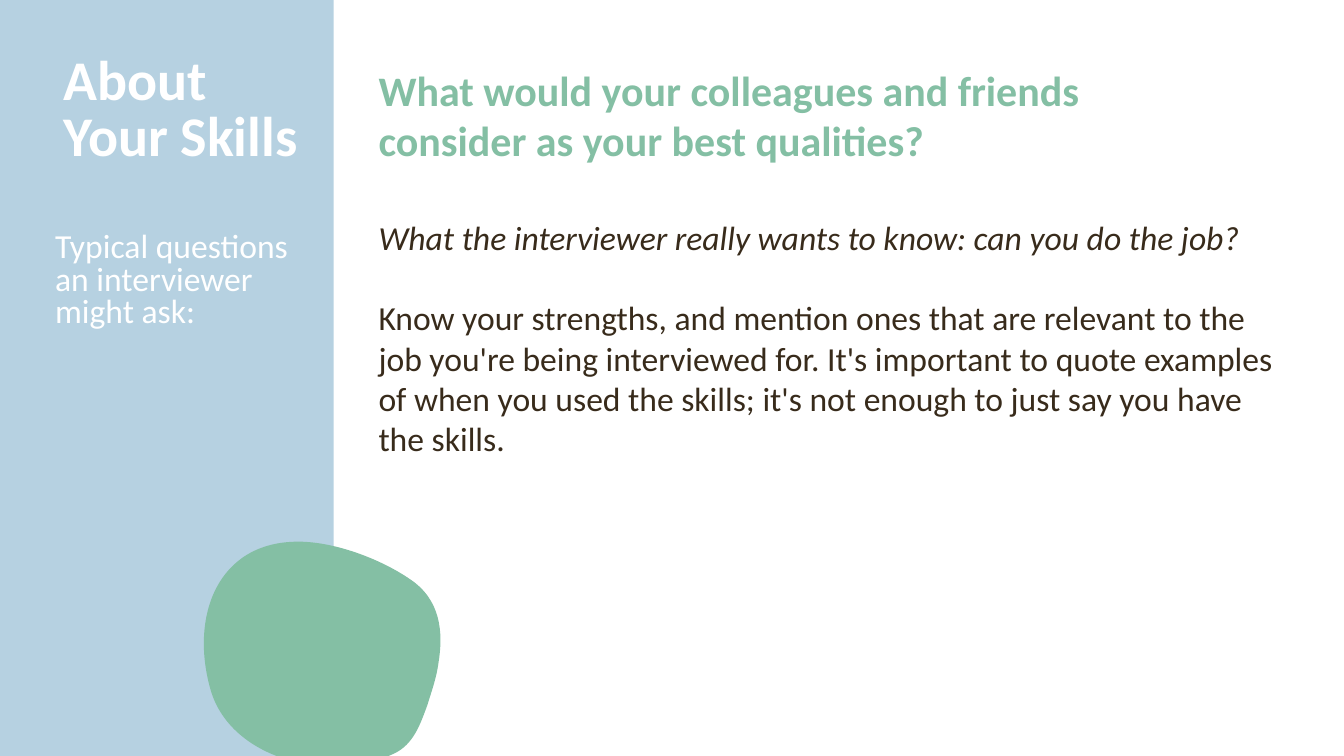
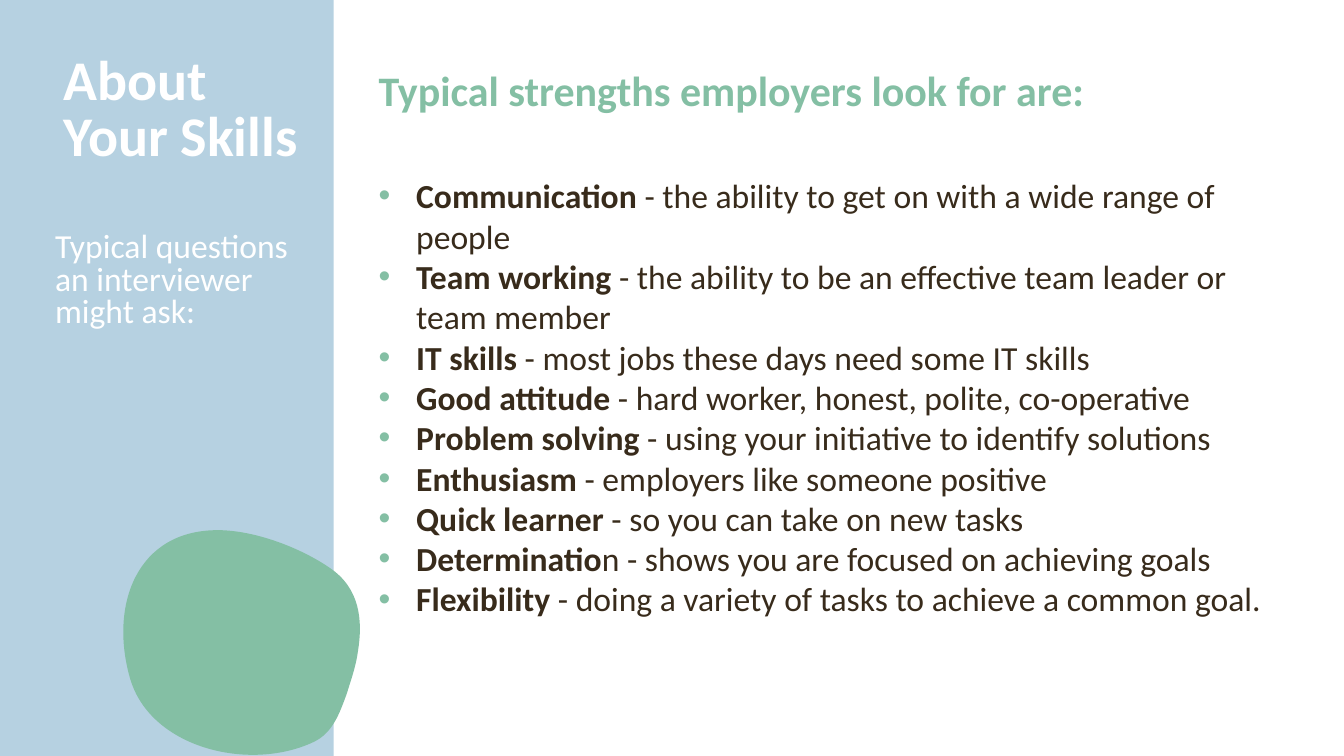
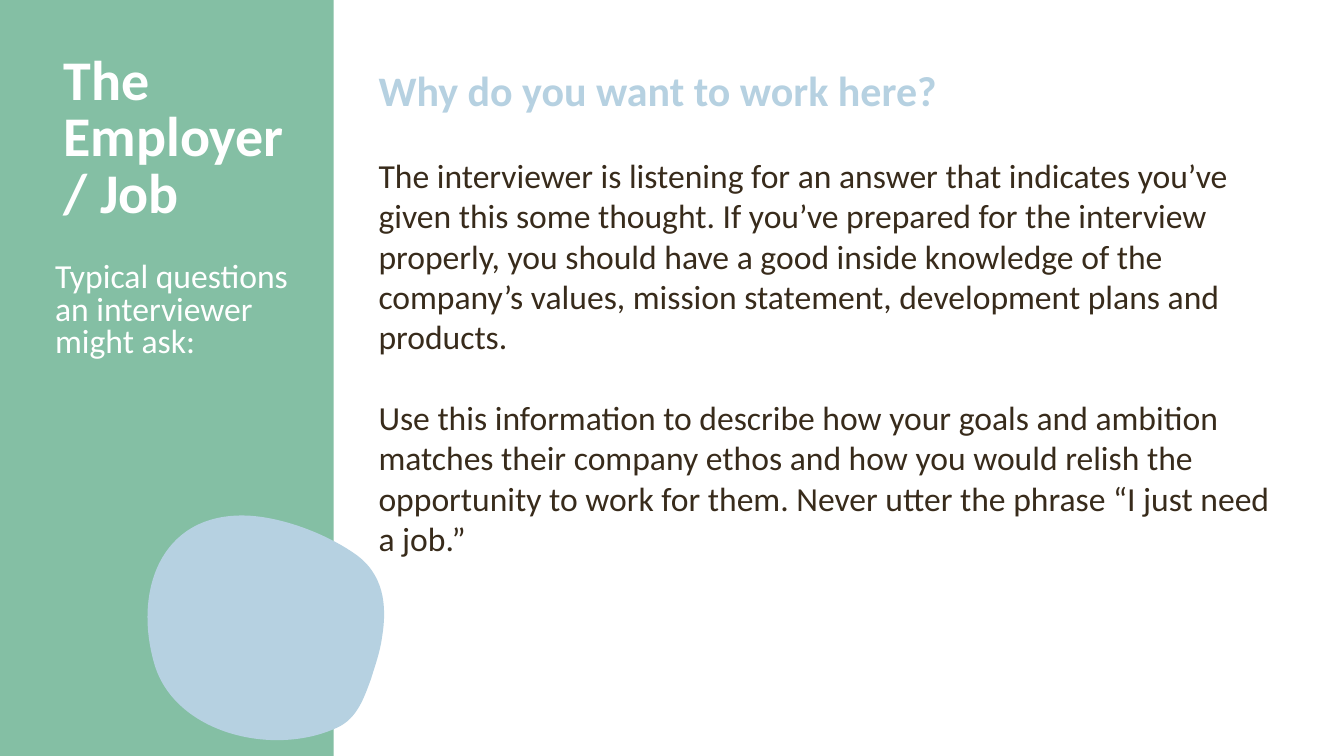
from dataclasses import dataclass

from lxml.etree import SubElement
from pptx import Presentation
from pptx.dml.color import RGBColor
from pptx.enum.shapes import MSO_SHAPE
from pptx.enum.text import MSO_ANCHOR, MSO_AUTO_SIZE, PP_ALIGN
from pptx.oxml.ns import qn
from pptx.util import Cm, Pt

BLUE, GREEN, BROWN, WHITE = "B6D1E1", "84BFA4", "382B1B", "FFFFFF"
FONT = "Calibri"
SLIDE_W, SLIDE_H = 33.87, 19.05
PANEL_W = 8.41
CONTENT_LEFT = 9.29
BODY_BOTTOM = 18
PROMPT_BOTTOM = 11.51
PROMPT = "Typical questions an interviewer might ask:"
BODY_GAP = 28.8
BULLET_INDENT = 0.95

# Blob outline in cm from its own corner: a start, then Bezier triples.
BLOB_START = (5.79, 3.23)
BLOB_CURVES = [
    ((5.92, 2.44), (5.84, 1.63), (5.08, 1.12)),
    ((4.34, 0.61), (3.2, 0.18), (2.29, 0.17)),
    ((0.2, 0.15), (-0.48, 2.08), (0.05, 3.91)),
    ((0.56, 5.66), (3.05, 6.27), (4.67, 5.51)),
    ((5.16, 5.28), (5.33, 4.78), (5.51, 4.29)),
    ((5.61, 3.96), (5.74, 3.61), (5.79, 3.23)),
]


@dataclass(frozen=True)
class Style:
    size: float
    color: str
    bold: bool = False
    leading: float | None = None


@dataclass(frozen=True)
class Span:
    text: str
    bold: bool = False
    italic: bool = False


@dataclass(frozen=True)
class Paragraph:
    spans: list[Span]
    space_before: float = 0
    bullet: str | None = None


@dataclass(frozen=True)
class Topic:
    title: str
    question: str
    panel_color: str
    accent: str
    body: list[Paragraph]
    body_top: float
    body_width: float
    prompt_top: float
    blob_at: tuple[float, float]
    question_width: float = 22.02


TITLE = Style(40, WHITE, bold=True, leading=40.2)
PROMPT_STYLE = Style(24, WHITE, leading=23.2)
BODY = Style(24, BROWN)


def rgb(color: str) -> RGBColor:
    return RGBColor.from_string(color)


def plain(text: str, italic: bool = False, space_before: float = 0) -> Paragraph:
    return Paragraph([Span(text, italic=italic)], space_before)


def strength(name: str, meaning: str) -> Paragraph:
    return Paragraph([Span(name, bold=True), Span(meaning)], bullet=GREEN)


def paint(shape, color: str) -> None:
    shape.shadow.inherit = False
    shape.fill.solid()
    shape.fill.fore_color.rgb = rgb(color)
    shape.line.fill.background()


def add_bullet(paragraph, color: str) -> None:
    properties = paragraph._p.get_or_add_pPr()
    properties.set("marL", str(Cm(BULLET_INDENT)))
    properties.set("indent", str(-Cm(BULLET_INDENT)))
    bullet_color = SubElement(properties, qn("a:buClr"))
    SubElement(bullet_color, qn("a:srgbClr"), val=color)
    SubElement(properties, qn("a:buFont"), typeface="Arial")
    SubElement(properties, qn("a:buChar"), char="•")


def write(frame, paragraphs: list[Paragraph], style: Style) -> None:
    frame.word_wrap = True
    frame.auto_size = MSO_AUTO_SIZE.NONE
    frame.vertical_anchor = MSO_ANCHOR.TOP
    for index, content in enumerate(paragraphs):
        paragraph = frame.add_paragraph() if index else frame.paragraphs[0]
        paragraph.alignment = PP_ALIGN.LEFT
        if style.leading:
            paragraph.line_spacing = Pt(style.leading)
        if content.space_before:
            paragraph.space_before = Pt(content.space_before)
        if content.bullet:
            add_bullet(paragraph, content.bullet)
        for span in content.spans:
            run = paragraph.add_run()
            run.text = span.text
            run.font.name = FONT
            run.font.size = Pt(style.size)
            run.font.bold = style.bold or span.bold
            run.font.italic = span.italic
            run.font.color.rgb = rgb(style.color)


def add_text(slide, left: float, top: float, width: float, height: float,
             paragraphs: list[Paragraph], style: Style) -> None:
    box = slide.shapes.add_textbox(Cm(left), Cm(top), Cm(width), Cm(height))
    write(box.text_frame, paragraphs, style)


def bend(shape) -> None:
    """Turn each three straight segments of a freeform into one Bezier curve."""
    segments = list(shape.element.iter(qn("a:lnTo")))
    for first, second, third in zip(segments[::3], segments[1::3], segments[2::3]):
        first.tag = qn("a:cubicBezTo")
        for segment in (second, third):
            first.append(segment[0])
            segment.getparent().remove(segment)


def add_blob(slide, at: tuple[float, float], color: str) -> None:
    builder = slide.shapes.build_freeform(Cm(BLOB_START[0]), Cm(BLOB_START[1]))
    points = [(Cm(x), Cm(y)) for curve in BLOB_CURVES for x, y in curve]
    builder.add_line_segments(points, close=True)
    blob = builder.convert_to_shape(Cm(at[0]), Cm(at[1]))
    bend(blob)
    paint(blob, color)


def add_panel_title(slide, title: str, color: str) -> None:
    """Colour the side panel and set the slide title in front of it."""
    heading = slide.shapes.title
    panel = slide.shapes.add_shape(
        MSO_SHAPE.RECTANGLE, Cm(0), Cm(0), Cm(PANEL_W), Cm(SLIDE_H))
    paint(panel, color)
    heading.element.addprevious(panel.element)
    heading.left, heading.top = Cm(1.35), Cm(1.27)
    heading.width, heading.height = Cm(6.58), Cm(6.35)
    write(heading.text_frame, [plain(title)], TITLE)


def add_topic(deck, topic: Topic) -> None:
    slide = deck.slides.add_slide(deck.slide_layouts.get_by_name("Title Only"))
    add_panel_title(slide, topic.title, topic.panel_color)
    add_text(slide, CONTENT_LEFT, topic.body_top, topic.body_width,
             BODY_BOTTOM - topic.body_top, topic.body, BODY)
    add_text(slide, CONTENT_LEFT, 1.5, topic.question_width, 1.45,
             [plain(topic.question)], Style(30, topic.accent, bold=True))
    add_text(slide, 1.14, topic.prompt_top, 6.68,
             PROMPT_BOTTOM - topic.prompt_top, [plain(PROMPT)], PROMPT_STYLE)
    add_blob(slide, topic.blob_at, topic.accent)


TOPICS = [
    Topic(
        "About Your Skills",
        "What would your colleagues and friends consider as your best qualities?",
        BLUE, GREEN,
        [
            plain("What the interviewer really wants to know: can you do the job?",
                  italic=True),
            plain("Know your strengths, and mention ones that are relevant to the job "
                  "you're being interviewed for. It's important to quote examples of "
                  "when you used the skills; it's not enough to just say you have the "
                  "skills.", space_before=BODY_GAP),
        ],
        body_top=5.33, body_width=23.11, prompt_top=5.75, blob_at=(5.26, 13.48),
    ),
    Topic(
        "About Your Skills",
        "Typical strengths employers look for are:",
        BLUE, GREEN,
        [
            strength("Communication ", "- the ability to get on with a wide range of people"),
            strength("Team working ",
                     "- the ability to be an effective team leader or team member"),
            strength("IT skills ", "- most jobs these days need some IT skills"),
            strength("Good attitude ", "- hard worker, honest, polite, co-operative"),
            strength("Problem solving ", "- using your initiative to identify solutions"),
            strength("Enthusiasm", " - employers like someone positive"),
            strength("Quick learner ", "- so you can take on new tasks"),
            strength("Determinatio", "n - shows you are focused on achieving goals"),
            strength("Flexibility", " - doing a variety of tasks to achieve a common goal."),
        ],
        body_top=4.29, body_width=22.91, prompt_top=5.75, blob_at=(3.23, 13.19),
    ),
    Topic(
        "The Employer / Job",
        "Why do you want to work here?",
        GREEN, BLUE,
        [
            plain("The interviewer is listening for an answer that indicates you’ve "
                  "given this some thought. If you’ve prepared for the interview "
                  "properly, you should have a good inside knowledge of the company’s "
                  "values, mission statement, development plans and products."),
            plain("Use this information to describe how your goals and ambition matches "
                  "their company ethos and how you would relish the opportunity to work "
                  "for them. Never utter the phrase “I just need a job.”",
                  space_before=BODY_GAP),
        ],
        body_top=3.78, body_width=23.44, prompt_top=6.5, blob_at=(3.84, 12.82),
        question_width=23.44,
    ),
]


def main() -> None:
    deck = Presentation()
    deck.slide_width, deck.slide_height = Cm(SLIDE_W), Cm(SLIDE_H)
    for topic in TOPICS:
        add_topic(deck, topic)
    deck.save("out.pptx")


if __name__ == "__main__":
    main()
